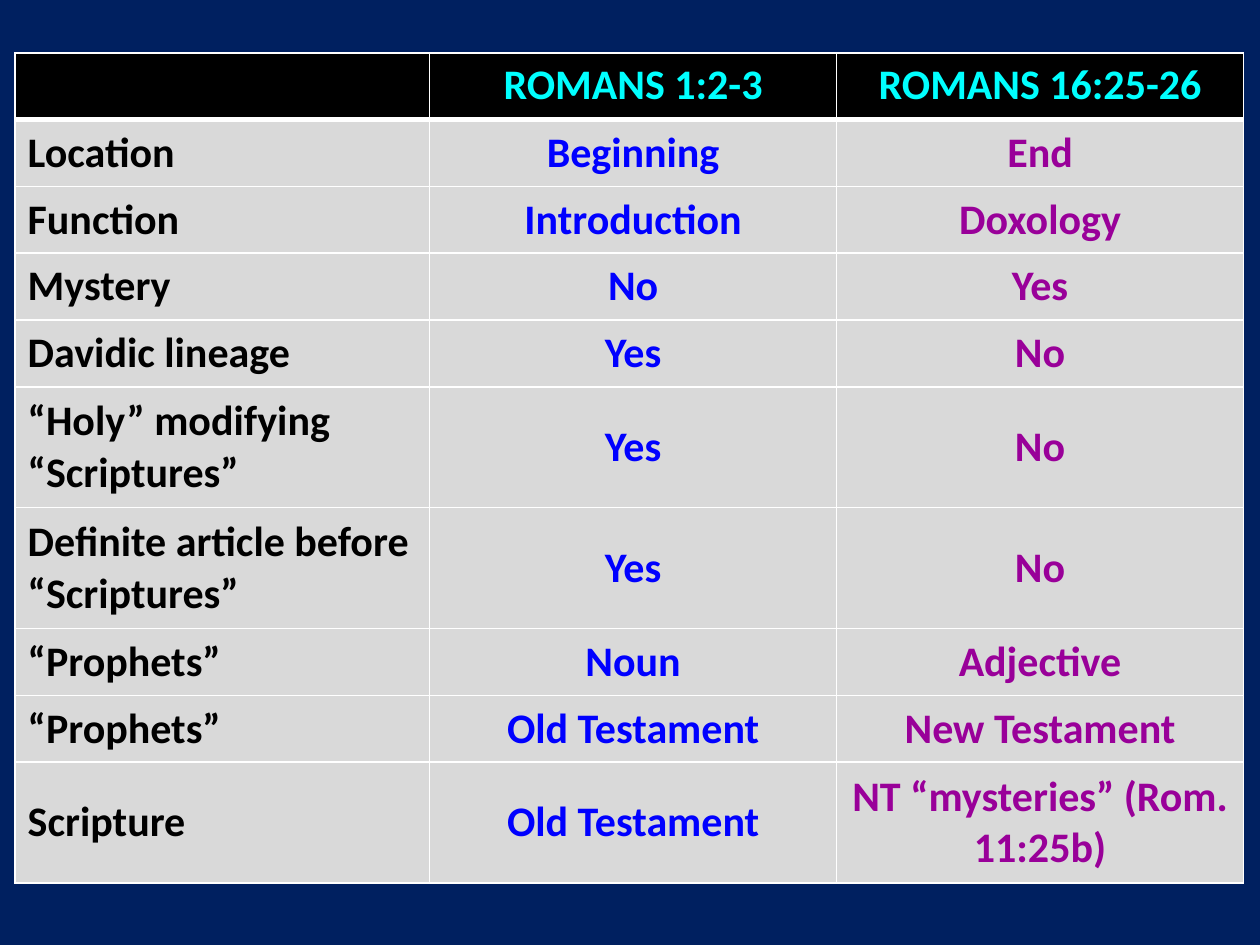
from lxml import etree
from pptx import Presentation
from pptx import util as u
from pptx.dml.color import RGBColor
from pptx.enum import text
from pptx.oxml.ns import qn

COLORS = {
    "background": "002060",
    "header": "000000",
    "body": "D9D9D9",
    "border": "FFFFFF",
    "heading": "00FFFF",
    "topic": "000000",
    "opening": "0000FF",
    "closing": "990099",
}
COLUMNS = [("topic", 3.29), ("opening", 3.23), ("closing", 3.23)]
SINGLE, DOUBLE = 0.53, 0.96
ROWS = [
    (SINGLE, "", "ROMANS 1:2-3", "ROMANS 16:25-26"),
    (SINGLE, "Location", "Beginning", "End"),
    (SINGLE, "Function", "Introduction", "Doxology"),
    (SINGLE, "Mystery", "No", "Yes"),
    (SINGLE, "Davidic lineage", "Yes", "No"),
    (DOUBLE, "“Holy” modifying “Scriptures”", "Yes", "No"),
    (DOUBLE, "Definite article before “Scriptures”", "Yes", "No"),
    (SINGLE, "“Prophets”", "Noun", "Adjective"),
    (SINGLE, "“Prophets”", "Old Testament", "New Testament"),
    (DOUBLE, "Scripture", "Old Testament", "NT “mysteries” (Rom. 11:25b)"),
]


def rgb(name):
    return RGBColor.from_string(COLORS[name])


def set_borders(cell, top, bottom):
    tc_pr = cell._tc.get_or_add_tcPr()
    for side, width in (("L", 1), ("R", 1), ("T", top), ("B", bottom)):
        ln = etree.SubElement(tc_pr, qn(f"a:ln{side}"), w=str(u.Pt(width)))
        fill = etree.SubElement(ln, qn("a:solidFill"))
        etree.SubElement(fill, qn("a:srgbClr"), val=COLORS["border"])


def set_fill(cell, color):
    cell.fill.solid()
    cell.fill.fore_color.rgb = rgb(color)


def set_text(cell, content, color, centered):
    p = cell.text_frame.paragraphs[0]
    p.text = content
    p.alignment = text.PP_ALIGN.CENTER if centered else text.PP_ALIGN.LEFT
    p.font.size = u.Pt(24)
    for r in p.runs:
        r.font.name = "Calibri"
        r.font.size = u.Pt(24)
        r.font.bold = True
        r.font.color.rgb = rgb(color)


def add_comparison(s):
    width = sum(w for _, w in COLUMNS)
    height = sum(row[0] for row in ROWS)
    table = s.shapes.add_table(
        len(ROWS), len(COLUMNS),
        u.Inches(0.12), u.Inches(0.42), u.Inches(width), u.Inches(height),
    ).table
    for column, (_, w) in zip(table.columns, COLUMNS):
        column.width = u.Inches(w)
    for i, (h, *contents) in enumerate(ROWS):
        table.rows[i].height = u.Inches(h)
        is_header = i == 0
        for j, content in enumerate(contents):
            cell = table.cell(i, j)
            set_borders(cell, 3 if i == 1 else 1, 3 if is_header else 1)
            set_fill(cell, "header" if is_header else "body")
            color = "heading" if is_header else COLUMNS[j][0]
            set_text(cell, content, color, j > 0)
            if not is_header:
                cell.vertical_anchor = text.MSO_ANCHOR.MIDDLE


def main():
    prs = Presentation()
    prs.slide_width, prs.slide_height = u.Inches(10), u.Inches(7.5)
    s = prs.slides.add_slide(prs.slide_layouts[6])
    s.background.fill.solid()
    s.background.fill.fore_color.rgb = rgb("background")
    add_comparison(s)
    prs.save("out.pptx")


if __name__ == "__main__":
    main()
